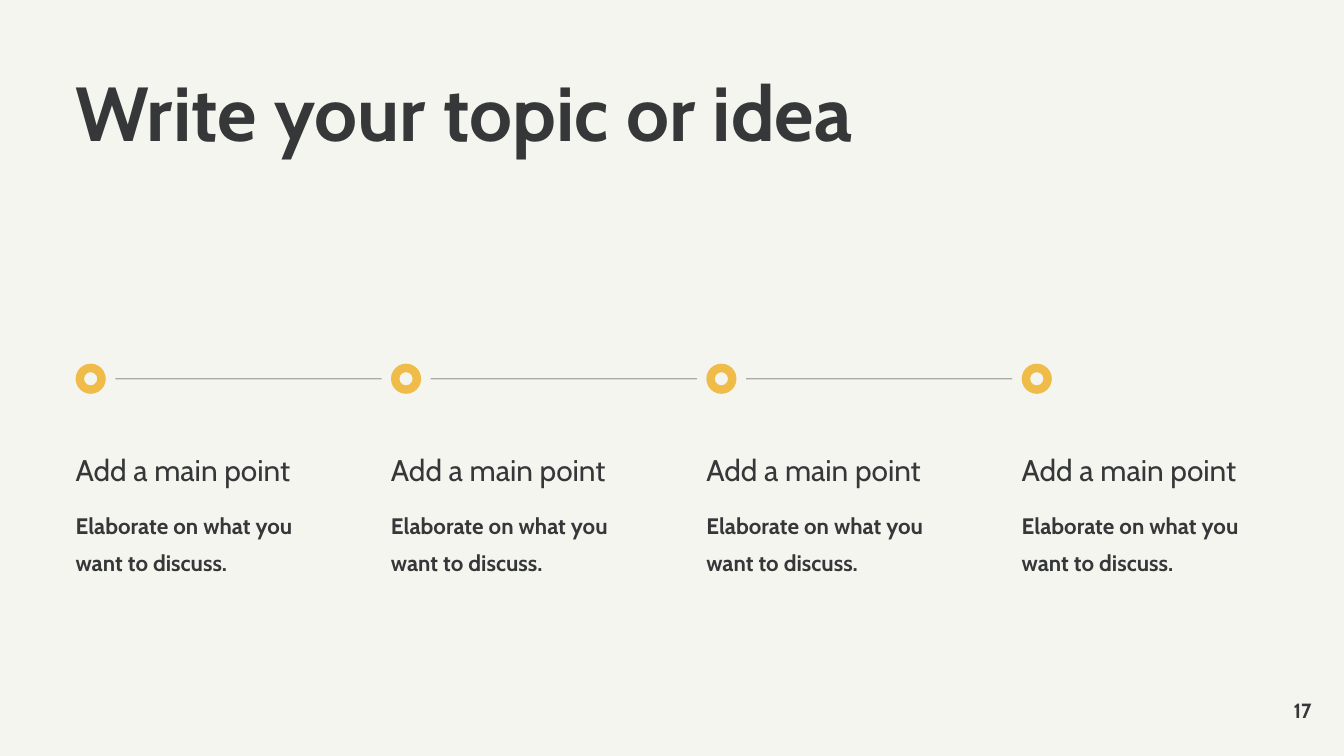
from dataclasses import dataclass

from lxml import etree
from pptx import Presentation
from pptx.dml.color import RGBColor
from pptx.enum.shapes import MSO_CONNECTOR, MSO_SHAPE
from pptx.enum.text import MSO_ANCHOR, MSO_AUTO_SIZE, PP_ALIGN
from pptx.oxml.ns import qn
from pptx.slide import Slide
from pptx.util import Cm, Pt

DONUT = MSO_SHAPE.DONUT
STRAIGHT = MSO_CONNECTOR.STRAIGHT
TOP, MIDDLE = MSO_ANCHOR.TOP, MSO_ANCHOR.MIDDLE
LEFT, RIGHT = PP_ALIGN.LEFT, PP_ALIGN.RIGHT
FIXED, GROW = MSO_AUTO_SIZE.NONE, MSO_AUTO_SIZE.SHAPE_TO_FIT_TEXT


@dataclass(frozen=True)
class Theme:
    background: RGBColor = RGBColor(0xF5, 0xF5, 0xEF)
    ink: RGBColor = RGBColor(0x36, 0x37, 0x39)
    accent: RGBColor = RGBColor(0xEF, 0xBC, 0x49)
    font: str = "Cabin"
    title_size: float = 41
    heading_size: float = 16
    body_size: float = 12
    number_size: float = 11
    line_width: float = 0.75
    line_opacity: int = 39


@dataclass(frozen=True)
class Box:
    """A rectangle in centimetres."""
    left: float
    top: float
    width: float
    height: float


@dataclass(frozen=True)
class TextStyle:
    size: float
    bold: bool = True
    line_spacing: float = 1.0
    alignment: PP_ALIGN = LEFT
    anchor: MSO_ANCHOR = TOP
    auto_size: MSO_AUTO_SIZE = FIXED


@dataclass(frozen=True)
class Point:
    heading: str
    body: str


THEME = Theme()
TITLE = TextStyle(THEME.title_size, line_spacing=0.9)
HEADING = TextStyle(THEME.heading_size, bold=False, line_spacing=1.4, auto_size=GROW)
BODY = TextStyle(THEME.body_size, line_spacing=1.4, auto_size=GROW)
NUMBER = TextStyle(THEME.number_size, alignment=RIGHT, anchor=MIDDLE)

MARGIN = 1.43
COLUMN_PITCH = 5.96
COLUMN_WIDTH = 4.67
RING_SIZE = 0.57
RING_THICKNESS = 0.28
TIMELINE_Y = 7.16
LINE_OFFSET = 0.75
LINE_LENGTH = 5.03

POINTS = [Point("Add a main point", "Elaborate on what you want to discuss.")] * 4


def set_attributes(target: object, values: dict) -> None:
    for name, value in values.items():
        setattr(target, name, value)


def add_text(slide: Slide, box: Box, text: str, style: TextStyle) -> None:
    shape = slide.shapes.add_textbox(
        Cm(box.left), Cm(box.top), Cm(box.width), Cm(box.height))
    frame = shape.text_frame
    set_attributes(frame, {
        "word_wrap": True, "auto_size": style.auto_size,
        "vertical_anchor": style.anchor,
        "margin_left": 0, "margin_top": 0, "margin_right": 0, "margin_bottom": 0,
    })
    paragraph = frame.paragraphs[0]
    set_attributes(paragraph, {
        "alignment": style.alignment, "line_spacing": style.line_spacing})
    run = paragraph.add_run()
    run.text = text
    set_attributes(run.font, {
        "name": THEME.font, "size": Pt(style.size), "bold": style.bold})
    run.font.color.rgb = THEME.ink


def add_ring(slide: Slide, left: float) -> None:
    ring = slide.shapes.add_shape(
        DONUT, Cm(left), Cm(TIMELINE_Y - RING_SIZE / 2), Cm(RING_SIZE), Cm(RING_SIZE))
    ring.adjustments[0] = RING_THICKNESS
    ring.shadow.inherit = False
    ring.fill.solid()
    ring.fill.fore_color.rgb = THEME.accent
    ring.line.fill.background()


def add_timeline_link(slide: Slide, left: float) -> None:
    """Draw the translucent line that leads to the next ring."""
    link = slide.shapes.add_connector(
        STRAIGHT, Cm(left), Cm(TIMELINE_Y), Cm(left + LINE_LENGTH), Cm(TIMELINE_Y))
    link.line.width = Pt(THEME.line_width)
    link.line.color.rgb = THEME.ink
    properties = link._element.spPr
    color = properties.find(".//" + qn("a:srgbClr"))
    etree.SubElement(color, qn("a:alpha"), val=str(THEME.line_opacity * 1000))
    etree.SubElement(properties, qn("a:effectLst"))


def add_point(slide: Slide, left: float, point: Point) -> None:
    add_ring(slide, left)
    add_text(slide, Box(left, 8.26, COLUMN_WIDTH, 0.69), point.heading, HEADING)
    add_text(slide, Box(left, 9.47, COLUMN_WIDTH, 1.22), point.body, BODY)


def main() -> None:
    presentation = Presentation()
    set_attributes(presentation, {"slide_width": Cm(25.4), "slide_height": Cm(14.29)})
    slide = presentation.slides.add_slide(presentation.slide_layouts[6])
    slide.background.fill.solid()
    slide.background.fill.fore_color.rgb = THEME.background

    add_text(slide, Box(MARGIN, 1.42, 18.01, 2.01), "Write your topic or idea", TITLE)
    for index, point in enumerate(POINTS):
        left = MARGIN + index * COLUMN_PITCH
        add_point(slide, left, point)
        if index < len(POINTS) - 1:
            add_timeline_link(slide, left + LINE_OFFSET)
    add_text(slide, Box(23.27, 13.18, 1.52, 0.51), "17", NUMBER)

    presentation.save("out.pptx")


if __name__ == "__main__":
    main()
